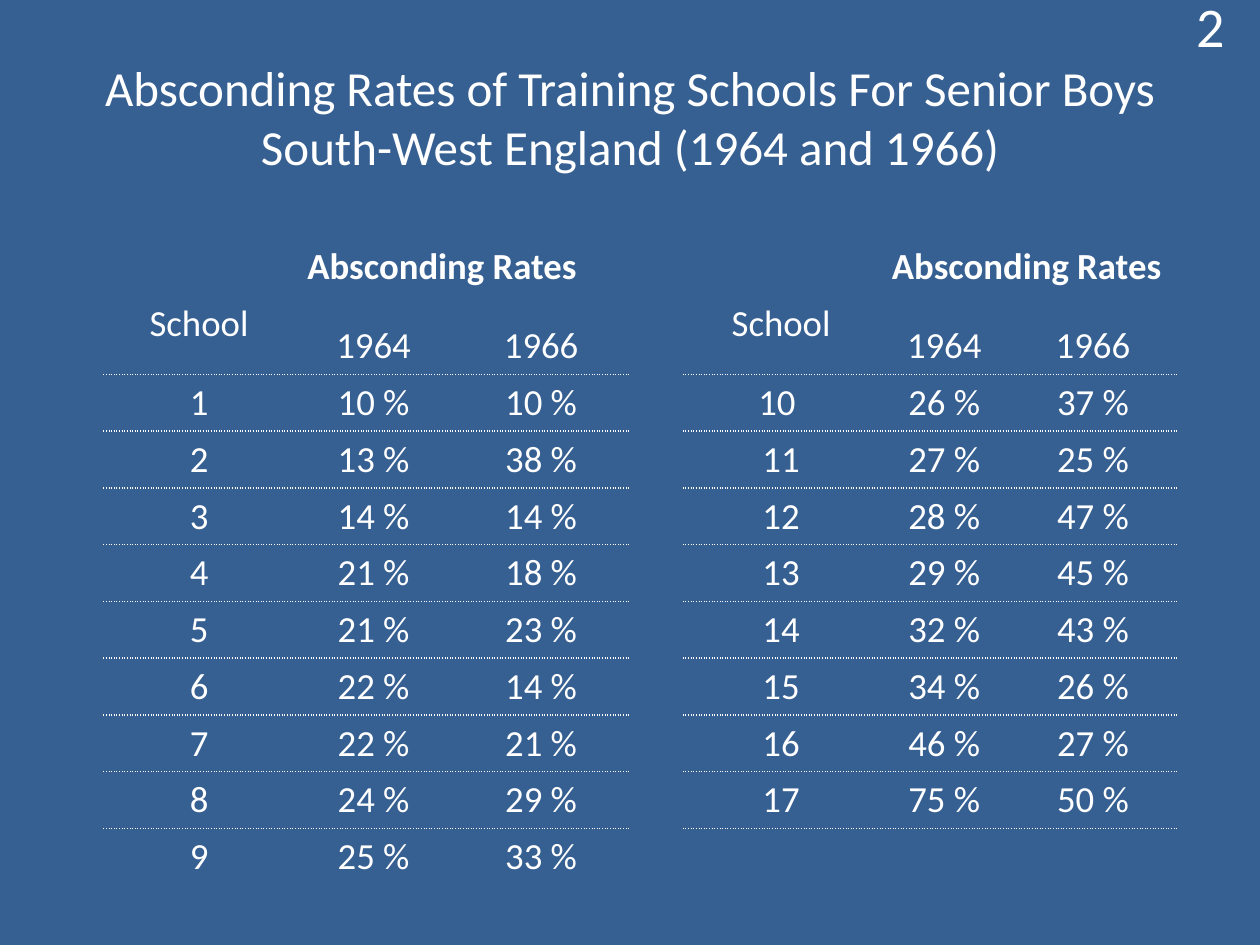
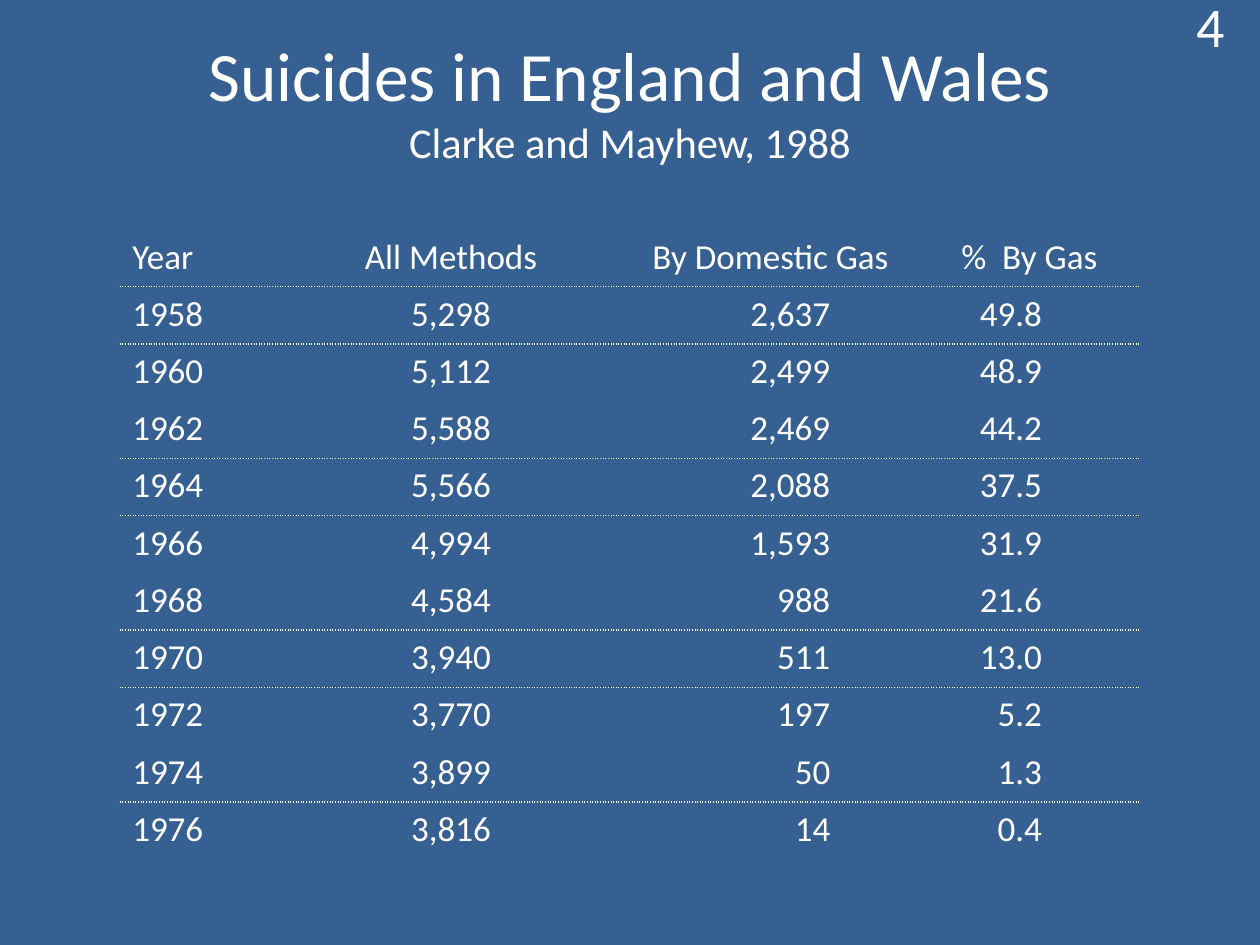
from lxml.etree import SubElement
from pptx import Presentation
from pptx.dml.color import RGBColor as RGB
from pptx.enum.text import MSO_ANCHOR as ANCHOR, PP_ALIGN as ALIGN
from pptx.oxml import parse_xml
from pptx.oxml.ns import nsdecls, qn
from pptx.util import Inches, Pt

BLUE, WHITE, FONT = "376092", "FFFFFF", "Calibri"
NO_STYLE = "{2D5ABB26-0587-4C30-8999-92F81FD0307C}"

SCHOOLS_LEFT = [(1, 10, 10), (2, 13, 38), (3, 14, 14), (4, 21, 18), (5, 21, 23),
                (6, 22, 14), (7, 22, 21), (8, 24, 29), (9, 25, 33)]
SCHOOLS_RIGHT = [("10 ", 26, 37), (11, 27, 25), (12, 28, 47), (13, 29, 45),
                 (14, 32, 43), (15, 34, 26), (16, 46, 27), (17, 75, 50)]
SUICIDES = [
    ("Year", "All Methods", "By Domestic Gas", "%  By Gas"),
    ("1958", "5,298", "2,637", "49.8"),
    ("1960", "5,112", "2,499", "48.9"),
    ("1962", "5,588", "2,469", "44.2"),
    ("1964", "5,566", "2,088", "37.5"),
    ("1966", "4,994", "1,593", "31.9"),
    ("1968", "4,584", "988", "21.6"),
    ("1970", "3,940", "511", "13.0"),
    ("1972", "3,770", "197", "5.2"),
    ("1974", "3,899", "50", "1.3"),
    ("1976", "3,816", "14", "0.4"),
]


def color(value):
    """Turn a hex string into a colour."""
    return RGB.from_string(value)


def write(p, text, size=20, bold=False, align=ALIGN.CENTER, spacing=None):
    """Add a formatted run to a paragraph."""
    p.alignment = align
    if spacing:
        p.line_spacing = spacing
    r = p.add_run()
    r.text = text
    r.font.name, r.font.size, r.font.bold = FONT, Pt(size), bold
    r.font.color.rgb = color(WHITE)


class Deck:
    """Hold the shared style and the current slide."""

    def __init__(self):
        """Start an empty deck."""
        self.prs = Presentation()
        self.prs.slide_width, self.prs.slide_height = Inches(10), Inches(7.5)

    def slide(self, number):
        """Add a blue slide with its number in the corner."""
        self.s = self.prs.slides.add_slide(self.prs.slide_layouts[6])
        self.s.background.fill.solid()
        self.s.background.fill.fore_color.rgb = color(BLUE)
        write(self.box(7.49, 0, 2.33, 0.4), number, size=32, align=ALIGN.RIGHT)

    def box(self, x, y, w, h):
        """Add a text box and return its first paragraph."""
        tf = self.s.shapes.add_textbox(*map(Inches, (x, y, w, h))).text_frame
        tf.word_wrap, tf.vertical_anchor = True, ANCHOR.MIDDLE
        return tf.paragraphs[0]

    def title(self, y, h, *lines):
        """Add a centred title from (text, size) lines."""
        p = self.box(0.5, y, 9, h)
        for i, (text, size) in enumerate(lines):
            if i:
                p.add_line_break()
            write(p, text, size=size)

    def table(self, x, y, widths, heights):
        """Add a table without style or fill."""
        sp = self.s.shapes.add_table(len(heights), len(widths), Inches(x), Inches(y),
                                     Inches(sum(widths)), Inches(sum(heights)))
        table = sp.table
        table.first_row = table.horz_banding = False
        sp._element.find(".//" + qn("a:tableStyleId")).text = NO_STYLE
        for col, w in zip(table.columns, widths):
            col.width = Inches(w)
        for row, h in zip(table.rows, heights):
            row.height = Inches(h)
        for cell in table.iter_cells():
            cell.fill.background()
        return table

    def rule(self, table, rows, cols):
        """Draw a dotted line between each given row and the next."""
        for row in rows:
            for col in cols:
                for r, side in ((row, "lnB"), (row + 1, "lnT")):
                    ln = parse_xml(f'<a:{side} {nsdecls("a")} w="12700"/>')
                    fill = SubElement(ln, qn("a:solidFill"))
                    SubElement(fill, qn("a:srgbClr"), val=WHITE)
                    SubElement(ln, qn("a:prstDash"), val="sysDot")
                    tc_pr = table.cell(r, col)._tc.get_or_add_tcPr()
                    tc_pr.insert(1 if side == "lnB" and len(tc_pr) > 1 else 0, ln)

    def cell(self, table, row, col, text, **fmt):
        """Write into a table cell and return the cell."""
        cell = table.cell(row, col)
        write(cell.text_frame.paragraphs[0], text, **fmt)
        return cell


def absconding(deck):
    """Build the slide on absconding rates."""
    deck.slide("2")
    deck.title(0.3, 1.25, ("Absconding Rates of Training Schools For Senior Boys "
                           "South-West England (1964 and 1966)", 28))
    table = deck.table(0.82, 1.89, [1.52, 1.25, 1.41, 0.42, 1.56, 1.03, 1.33],
                       [0.45, 0.63] + [0.45] * 9)
    for left, schools in ((0, SCHOOLS_LEFT), (4, SCHOOLS_RIGHT)):
        table.cell(0, left + 1).merge(table.cell(0, left + 2))
        deck.cell(table, 0, left + 1, "Absconding Rates", size=21, bold=True,
                  align=ALIGN.LEFT)
        deck.cell(table, 1, left, "School", size=21)
        for i, year in enumerate(("1964", "1966"), 1):
            deck.cell(table, 1, left + i, year, size=21, spacing=1.5)
        for row, (school, *rates) in enumerate(schools, 2):
            deck.cell(table, row, left, str(school), size=21)
            for i, rate in enumerate(rates, 1):
                deck.cell(table, row, left + i, f"{rate} %", size=21)
        deck.rule(table, (1, 2, 4, 5, 7, 8), range(left, left + 3))


def suicides(deck):
    """Build the slide on suicides by method."""
    deck.slide("4")
    deck.title(0.29, 1, ("Suicides in England and Wales", 39.6),
               ("Clarke and Mayhew, 1988", 24.3))
    table = deck.table(0.95, 1.82, [1.28, 2.7, 2.37, 1.74], [5 / 11] * len(SUICIDES))
    right_insets = {2: 0.71, 3: 0.77}
    for row, values in enumerate(SUICIDES):
        for col, text in enumerate(values):
            inset = right_insets.get(col) if row else None
            align = ALIGN.RIGHT if inset else ALIGN.CENTER if col else ALIGN.LEFT
            cell = deck.cell(table, row, col, text, align=align)
            if inset:
                cell.margin_right = Inches(inset)
    deck.rule(table, range(0, 10, 3), range(4))


def main():
    """Build and save the deck."""
    deck = Deck()
    absconding(deck)
    suicides(deck)
    deck.prs.save("out.pptx")


if __name__ == "__main__":
    main()
